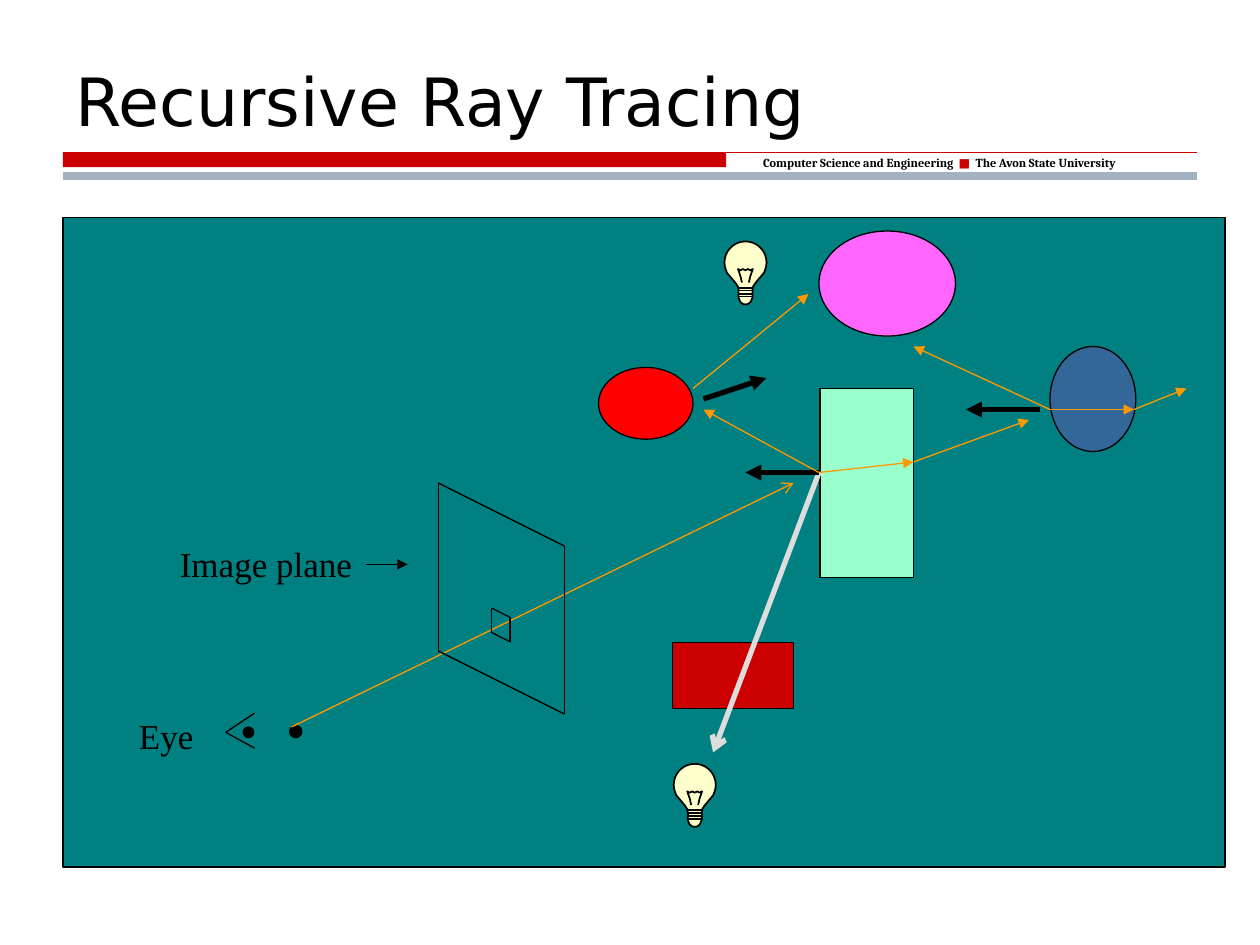
from dataclasses import dataclass
from math import cos, radians, sin

from lxml import etree
from pptx import Presentation
from pptx.dml.color import RGBColor
from pptx.enum import shapes, text
from pptx.oxml import ns
from pptx.util import Pt


@dataclass(frozen=True)
class Theme:
    ink: str = "000000"
    red: str = "CC0000"
    rule: str = "A3B2C1"
    scene: str = "008080"
    glass: str = "FFFFCC"
    ball: str = "FF0000"
    block: str = "99FFCC"
    lens: str = "336699"
    balloon: str = "FF66FF"
    ray: str = "FF9900"
    shadow_ray: str = "DDDDDD"
    title_size: float = 38
    label_size: float = 20
    banner_size: float = 7
    thin: float = 0.75
    medium: float = 1
    thick: float = 3
    heavy: float = 4.5
    sans: str = "DejaVu Sans"
    serif: str = "Times New Roman"
    banner_font: str = "Cambria"


THEME = Theme()
RECT = shapes.MSO_SHAPE.RECTANGLE
OVAL = shapes.MSO_SHAPE.OVAL


def rgb(color):
    return RGBColor.from_string(color)


def style_run(run, font, size, color, bold=False):
    run.font.name = font
    run.font.size = Pt(size)
    run.font.color.rgb = rgb(color)
    run.font.bold = bold


def style_shape(shape, fill, line=THEME.ink, width=THEME.thin):
    shape.shadow.inherit = False
    if fill:
        shape.fill.solid()
        shape.fill.fore_color.rgb = rgb(fill)
    else:
        shape.fill.background()
    shape.line.color.rgb = rgb(line)
    shape.line.width = Pt(width)


def add_solid(parent, origin, kind, box, fill, line=THEME.ink):
    left, top, width, height = box
    shape = parent.shapes.add_shape(
        kind, Pt(origin[0] + left), Pt(origin[1] + top), Pt(width), Pt(height))
    style_shape(shape, fill, line)
    return shape


def add_line(parent, origin, start, end, color=THEME.ink, width=THEME.thin, head=None):
    points = [Pt(base + offset) for point in (start, end)
              for base, offset in zip(origin, point)]
    line = parent.shapes.add_connector(shapes.MSO_CONNECTOR.STRAIGHT, *points)
    line.line.color.rgb = rgb(color)
    line.line.width = Pt(width)
    properties = line.line._get_or_add_ln()
    if head:
        etree.SubElement(properties, ns.qn("a:tailEnd"), type=head)
    etree.SubElement(properties.getparent(), ns.qn("a:effectLst"))


def add_outline(parent, origin, contours, fill, closed):
    placed = [[(Pt(origin[0] + x), Pt(origin[1] + y)) for x, y in contour]
              for contour in contours]
    builder = parent.shapes.build_freeform(*placed[0][0])
    for index, contour in enumerate(placed):
        if index:
            builder.move_to(*contour[0])
        builder.add_line_segments(contour[1:], close=closed)
    style_shape(builder.convert_to_shape(), fill, width=THEME.medium)


def add_label(parent, origin, box, words):
    left, top, width, height = box
    label = parent.shapes.add_textbox(
        Pt(origin[0] + left), Pt(origin[1] + top), Pt(width), Pt(height))
    label.text_frame.word_wrap = True
    label.text_frame.text = words
    paragraph = label.text_frame.paragraphs[0]
    paragraph.alignment = text.PP_ALIGN.CENTER
    style_run(paragraph.runs[0], THEME.serif, THEME.label_size, THEME.ink)


def add_title(slide, box):
    title = slide.shapes.title
    title.left, title.top, title.width, title.height = map(Pt, box)
    frame = title.text_frame
    frame.text = "Recursive Ray Tracing"
    frame.vertical_anchor = text.MSO_ANCHOR.BOTTOM
    paragraph = frame.paragraphs[0]
    paragraph.alignment = text.PP_ALIGN.LEFT
    style_run(paragraph.runs[0], THEME.sans, THEME.title_size, THEME.ink)


def add_banner(slide, box):
    left, top, width, height = box
    origin = (left, top)
    bar = add_solid(slide, origin, RECT, (0, 0, 379, 8.5), THEME.red)
    bar.line.fill.background()
    add_line(slide, origin, (0, 0), (width, 0), THEME.red)
    credit = slide.shapes.add_textbox(Pt(left + 393), Pt(top - 2), Pt(245.5), Pt(16))
    credit.text_frame.word_wrap = False
    paragraph = credit.text_frame.paragraphs[0]
    for words, font, color, bold in (
            ("Computer Science and Engineering  ", THEME.banner_font, THEME.ink, True),
            ("■", THEME.sans, THEME.red, False),
            ("  The Avon State University", THEME.banner_font, THEME.ink, True)):
        run = paragraph.add_run()
        run.text = words
        style_run(run, font, THEME.banner_size, color, bold)
    add_line(slide, origin, (0, height), (width, height), THEME.rule, THEME.heavy)


def add_bulb(slide, origin):
    dome = [(12 * sin(radians(a)), 12 - 12 * cos(radians(a))) for a in range(0, 111, 10)]
    side = dome + [(10.5, 18), (8, 21), (5.5, 24), (4.25, 26), (4, 28),
                   (4, 32), (3, 34.5), (1.5, 35.75), (0, 36)]
    mirrored = [(-x, y) for x, y in reversed(side[1:-1])]
    add_outline(slide, origin, [side + mirrored], THEME.glass, True)
    zigzag = [(x, 16.5 if index % 2 else 15.75)
              for index, x in enumerate((-4.25, -2.75, -1.5, 0, 1.5, 2.75, 4.25))]
    filament = [(-2, 23.5), (-2.75, 20), *zigzag, (2.75, 20), (2, 23.5)]
    thread = [(-4, 26.5), (4, 26.5), (4, 28), (-4, 28),
              (-4, 30), (4, 30), (4, 31.5), (-4, 31.5)]
    add_outline(slide, origin, [filament, thread], None, False)


def add_eye(slide, origin):
    group = slide.shapes.add_group_shape()
    for end in ((75.5, 3), (75.5, 23)):
        add_line(group, origin, (59, 14), end)
    add_solid(group, origin, OVAL, (69, 11, 6, 6), THEME.ink)
    add_label(group, origin, (0, 0, 50, 31), "Eye")
    add_solid(group, origin, OVAL, (95.5, 10, 7, 7), THEME.ink)


def add_skewed_frame(slide, origin, width, height):
    group = slide.shapes.add_group_shape()
    corners = [(0, 0), (width, width / 2), (width, width / 2 + height), (0, height)]
    for start, end in zip(corners, corners[1:] + corners[:1]):
        add_line(group, origin, start, end)


def add_rays(slide, origin, rays):
    group = slide.shapes.add_group_shape()
    for start, end, is_normal in rays:
        color, width = (THEME.ink, THEME.thick) if is_normal else (THEME.ray, THEME.thin)
        add_line(group, origin, start, end, color, width, "triangle")


def add_scene(slide, box):
    left, top, width, height = box
    origin = (left, top)

    def place(x, y):
        return left + x, top + y

    hit, exit_point = (432, 145.5), (486, 139.5)
    lens_in, lens_out = (564, 109.5), (612, 109.5)
    add_solid(slide, origin, RECT, (0, 0, width, height), THEME.scene)
    add_eye(slide, place(34, 280))
    for bulb in ((390, 13.5), (361, 312)):
        add_bulb(slide, place(*bulb))
    add_solid(slide, origin, RECT, (348.5, 242.5, 69, 38), THEME.red)
    add_solid(slide, origin, OVAL, (306, 85.5, 54, 41), THEME.ball)
    add_solid(slide, origin, RECT, (432.5, 97.5, 53.5, 108), THEME.block)
    add_line(slide, origin, (130.5, 291), (417.5, 151.5), THEME.ray, head="arrow")
    add_skewed_frame(slide, place(214.5, 151.5), 72, 96)
    add_label(slide, origin, (59, 182, 114, 31), "Image plane")
    add_line(slide, origin, (173, 198), (197, 198), head="triangle")
    add_skewed_frame(slide, place(245, 223), 10.5, 14)
    add_solid(slide, origin, OVAL, (564, 73.5, 49, 60), THEME.lens)
    add_line(slide, origin, hit, (371.5, 305.5), THEME.shadow_ray, THEME.thick, "arrow")
    add_rays(slide, origin, (
        (hit, (390, 145.5), True),
        (hit, (366, 109.5), False),
        (hit, exit_point, False),
        (exit_point, (552, 115.5), False)))
    add_rays(slide, origin, (
        ((360, 97.5), (426, 43.5), False),
        ((366, 103.5), (402, 91.5), True),
        (lens_in, lens_out, False),
        (lens_in, (486, 73.5), False),
        ((558, 109.5), (516, 109.5), True),
        (lens_out, (642, 97.5), False)))
    add_solid(slide, origin, OVAL, (432, 7.5, 78, 60), THEME.balloon)


def main():
    presentation = Presentation()
    presentation.slide_width, presentation.slide_height = Pt(720), Pt(540)
    slide = presentation.slides.add_slide(presentation.slide_layouts[5])
    add_banner(slide, (36, 87, 648, 13.75))
    add_scene(slide, (36, 124.5, 664, 371))
    add_title(slide, (36, 18, 648, 65.5))
    presentation.save("out.pptx")


if __name__ == "__main__":
    main()
